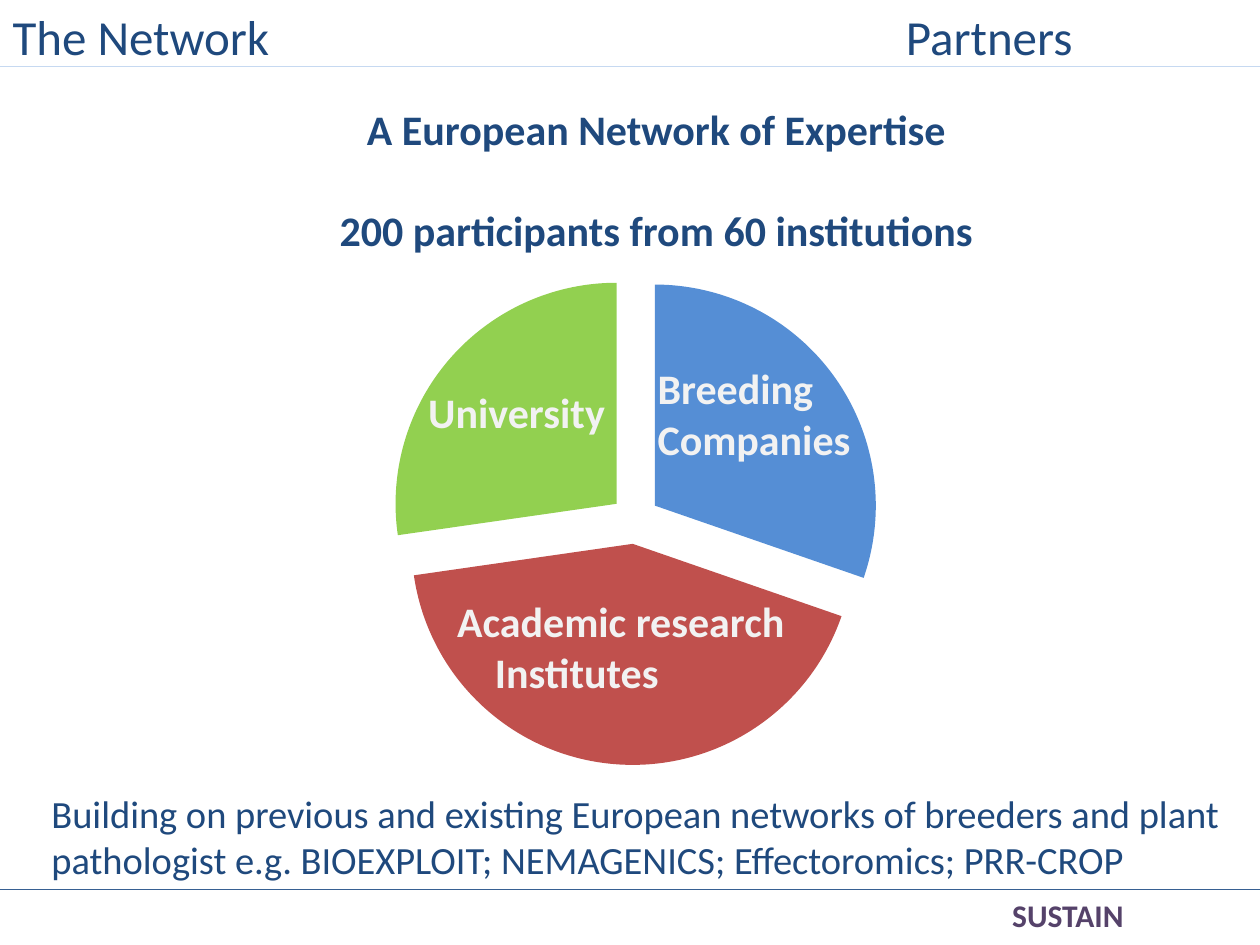
"""Build the network partners slide with its exploded pie chart."""
from lxml import etree
from pptx import Presentation
from pptx import util as u
from pptx.chart.data import CategoryChartData
from pptx.dml.color import RGBColor
from pptx.enum import chart, shapes, text
from pptx.oxml.ns import qn

NAVY = RGBColor(0x1F, 0x49, 0x7D)
OFF_WHITE = RGBColor(0xF2, 0xF2, 0xF2)
PURPLE = RGBColor(0x55, 0x42, 0x6A)
PALE_BLUE = RGBColor(0xC6, 0xD9, 0xF1)
STEEL = RGBColor(0x37, 0x60, 0x92)
BLUE = RGBColor(0x55, 0x8E, 0xD5)
RED = RGBColor(0xC0, 0x50, 0x4D)
GREEN = RGBColor(0x92, 0xD0, 0x50)
BLACK = RGBColor(0, 0, 0)


class SlideBuilder:
    font = "Calibri"

    def __init__(self, prs):
        self.s = prs.slides.add_slide(prs.slide_layouts[5])

    def style(self, font, size, color, bold=False):
        font.name, font.size, font.bold = self.font, u.Pt(size), bold
        font.color.rgb = color

    def title(self, box, left, right, tab):
        sp = self.s.shapes.title
        sp.left, sp.top, sp.width, sp.height = map(u.Inches, box)
        tf = sp.text_frame
        tf.text = f"{left}\t{right}"
        tf.vertical_anchor = text.MSO_ANCHOR.TOP
        tf.auto_size = text.MSO_AUTO_SIZE.NONE
        p = tf.paragraphs[0]
        p.alignment = text.PP_ALIGN.LEFT
        tabs = etree.SubElement(p._p.get_or_add_pPr(), qn("a:tabLst"))
        etree.SubElement(tabs, qn("a:tab"), pos=str(u.Inches(tab)), algn="l")
        self.style(p.font, 28, NAVY)

    def text(self, box, lines, size, color, bold=True, align=text.PP_ALIGN.LEFT,
             wrap=False, gap=0, indent=0, anchor=text.MSO_ANCHOR.TOP):
        tf = self.s.shapes.add_textbox(*map(u.Inches, box)).text_frame
        tf.word_wrap = wrap
        tf.vertical_anchor = anchor
        tf.text = "\n".join(lines)
        for i, p in enumerate(tf.paragraphs):
            p.alignment = align
            if i and gap:
                p.space_before = u.Pt(gap)
            if i and indent:
                p._p.get_or_add_pPr().set("marL", str(u.Inches(indent)))
            self.style(p.font, size, color, bold)

    def rule(self, y, color):
        line = self.s.shapes.add_connector(
            shapes.MSO_CONNECTOR.STRAIGHT, 0, u.Inches(y), u.Inches(10), u.Inches(y))
        line.line.color.rgb = color
        line.line.width = u.Pt(0.75)
        etree.SubElement(line._element.spPr, qn("a:effectLst"))

    def pie(self, box, values, colors, explosion):
        data = CategoryChartData()
        data.categories = [str(i + 1) for i in range(len(values))]
        data.add_series("Series 1", values)
        ch = self.s.shapes.add_chart(
            chart.XL_CHART_TYPE.PIE, *map(u.Inches, box), data).chart
        ch.has_legend = ch.has_title = False
        self.style(ch.font, 10, BLACK)
        plot = ch.plots[0]
        plot.vary_by_categories = True
        series = plot.series[0]
        for i, color in enumerate(colors):
            fill = series.points[i].format.fill
            fill.solid()
            fill.fore_color.rgb = color
        burst = etree.Element(qn("c:explosion"), val=str(explosion))
        series._element.find(qn("c:tx")).addnext(burst)


def main():
    prs = Presentation()
    prs.slide_width, prs.slide_height = u.Inches(10), u.Inches(7.5)
    b = SlideBuilder(prs)
    center = text.PP_ALIGN.CENTER
    b.title((0, 0, 9.29, 0.57), "The Network", "Partners", 7.09)
    b.rule(0.53, PALE_BLUE)
    b.pie((1.93, 2.04, 6.22, 4.17), (30, 42, 27), (BLUE, RED, GREEN), 11)
    b.text((2.53, 0.77, 5.36, 1.31),
           ["A European Network of Expertise", "200 participants from 60 institutions"],
           24, NAVY, align=center, gap=29)
    b.text((3.3, 3.02, 1.62, 0.5), ["University"], 24, OFF_WHITE)
    b.text((5.12, 2.83, 1.75, 0.91), ["Breeding", "Companies"], 24, OFF_WHITE)
    b.text((3.53, 4.68, 2.82, 0.91), ["Academic research", "Institutes"],
           24, OFF_WHITE, indent=0.3)
    b.text((0.31, 6.22, 9.69, 0.84),
           ["Building on previous and existing European networks of breeders and plant "
            "pathologist e.g. BIOEXPLOIT; NEMAGENICS; Effectoromics; PRR-CROP"],
           22, NAVY, bold=False, wrap=True)
    b.rule(7.06, STEEL)
    b.text((6.95, 7.06, 3.05, 0.4), ["SUSTAIN"], 18, PURPLE, align=center,
           wrap=True, anchor=text.MSO_ANCHOR.MIDDLE)
    prs.save("out.pptx")


if __name__ == "__main__":
    main()
